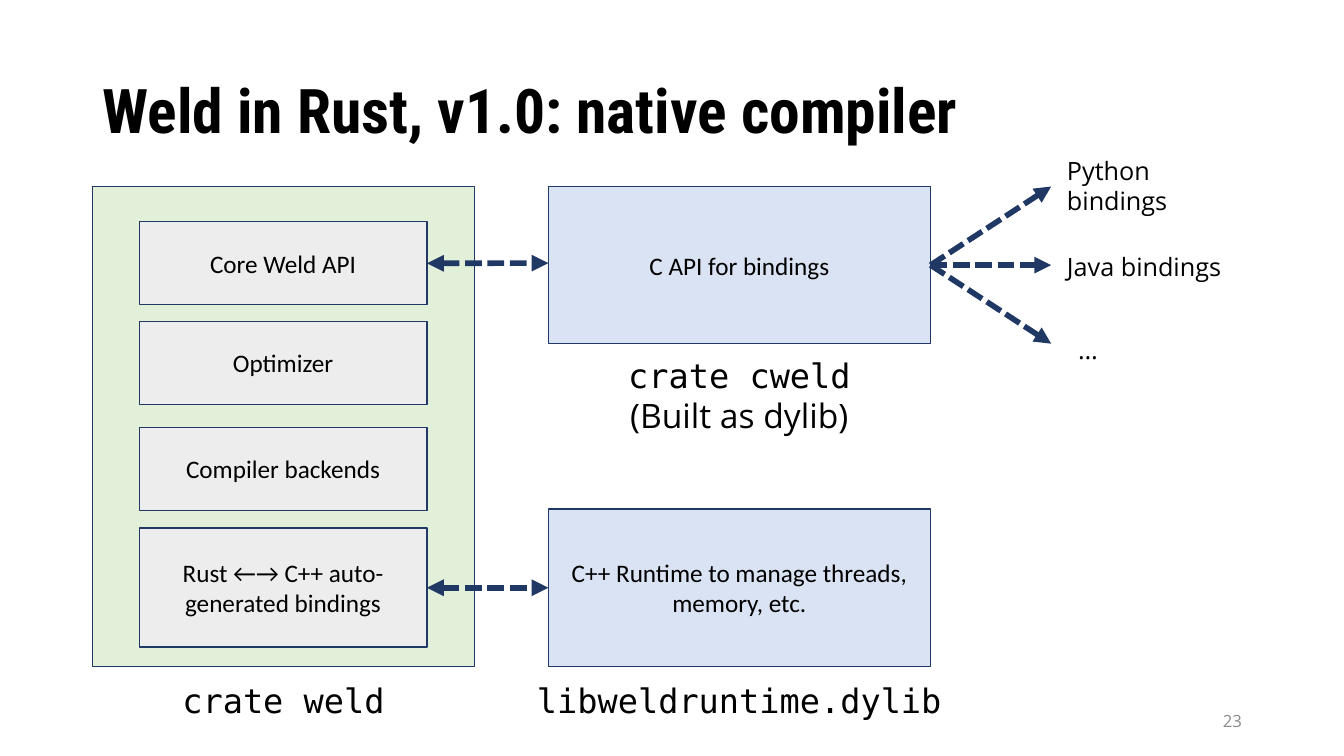
from lxml import etree
from pptx import Presentation
from pptx.dml.color import RGBColor
from pptx.enum import dml, shapes, text
from pptx.oxml import ns
from pptx.util import Cm, Pt

NAVY = RGBColor(0x20, 0x38, 0x64)
GREEN = RGBColor(0xE2, 0xF0, 0xD9)
BLUE = RGBColor(0xDA, 0xE3, 0xF3)
GREY = RGBColor(0xED, 0xED, 0xED)
BLACK = RGBColor(0, 0, 0)
NUMBER_GREY = RGBColor(0x8C, 0x8C, 0x8C)

BODY, MONO, HEADING, BOX = "Open Sans", "DejaVu Sans Mono", "Roboto Condensed", "Calibri"
LEFT, ALIGN_C, RIGHT = text.PP_ALIGN.LEFT, text.PP_ALIGN.CENTER, text.PP_ALIGN.RIGHT
TOP, MIDDLE = text.MSO_ANCHOR.TOP, text.MSO_ANCHOR.MIDDLE

CRATE_X, CRATE_W = 2.33, 9.63
PART_X, PART_W = 3.51, 7.25
LIB_X, LIB_H = 13.82, 3.96
TOP_Y = 4.7
RUNTIME_Y = 12.83


def style(p, size, font, color=BLACK, align=LEFT, bold=False):
    p.alignment = align
    p.font.size, p.font.name, p.font.bold = Pt(size), font, bold
    p.font.color.rgb = color


def add_box(s, x, y, w, h, fill, label=None):
    sp = s.shapes.add_shape(shapes.MSO_SHAPE.RECTANGLE, Cm(x), Cm(y), Cm(w), Cm(h))
    sp.shadow.inherit = False
    sp.fill.solid()
    sp.fill.fore_color.rgb = fill
    sp.line.color.rgb = NAVY
    sp.line.width = Pt(1)
    if label:
        tf = sp.text_frame
        tf.word_wrap, tf.vertical_anchor = True, MIDDLE
        tf.text = label
        style(tf.paragraphs[0], 18, BOX, align=ALIGN_C)
    return sp


def add_text(s, x, y, w, h, lines, size, color=BLACK, align=LEFT, bold=False, anchor=TOP):
    """Add a text box; lines is a list of (text, font), one per paragraph."""
    tf = s.shapes.add_textbox(Cm(x), Cm(y), Cm(w), Cm(h)).text_frame
    tf.word_wrap, tf.vertical_anchor = True, anchor
    for i, (line, font) in enumerate(lines):
        p = tf.add_paragraph() if i else tf.paragraphs[0]
        p.text = line
        style(p, size, font, color, align, bold)
    return tf


def add_arrow(s, x1, y1, x2, y2, begin, end=None, both=False):
    """Dashed arrow from the right of begin, optionally joined to the left of end."""
    c = s.shapes.add_connector(shapes.MSO_CONNECTOR.STRAIGHT, Cm(x1), Cm(y1), Cm(x2), Cm(y2))
    c.begin_connect(begin, 3)
    if end is not None:
        c.end_connect(end, 1)
    c.line.color.rgb = NAVY
    c.line.width = Pt(4)
    c.line.dash_style = dml.MSO_LINE.SQUARE_DOT
    ln = c.line._get_or_add_ln()
    for tag in ("a:headEnd", "a:tailEnd") if both else ("a:tailEnd",):
        etree.SubElement(ln, ns.qn(tag), type="triangle")
    etree.SubElement(c._element.spPr, ns.qn("a:effectLst"))


def main():
    prs = Presentation()
    prs.slide_width, prs.slide_height = Cm(33.87), Cm(19.05)
    s = prs.slides.add_slide(prs.slide_layouts[6])

    title = add_text(s, CRATE_X, 1.02, 29.21, 3.68,
                     [("Weld in Rust, v1.0: native compiler", HEADING)], 44,
                     bold=True, anchor=MIDDLE)
    title.paragraphs[0].line_spacing = 0.9
    add_text(s, 23.93, 17.65, 7.62, 1.02, [("23", BODY)], 12, NUMBER_GREY, RIGHT, anchor=MIDDLE)

    add_box(s, CRATE_X, TOP_Y, CRATE_W, 12.09, GREEN)
    core, _, _, bindings = [
        add_box(s, PART_X, y, PART_W, h, GREY, label)
        for y, h, label in (
            (5.59, 2.09, "Core Weld API"),
            (8.1, 2.09, "Optimizer"),
            (10.77, 2.09, "Compiler backends"),
            (13.31, 3, "Rust ←→ C++ auto-generated bindings"),
        )
    ]
    c_api = add_box(s, LIB_X, TOP_Y, CRATE_W, LIB_H, BLUE, "C API for bindings")
    runtime = add_box(s, LIB_X, RUNTIME_Y, CRATE_W, LIB_H, BLUE,
                      "C++ Runtime to manage threads, memory, etc.")

    part_right, lib_right = PART_X + PART_W, LIB_X + CRATE_W
    core_mid, runtime_mid = 6.63, RUNTIME_Y + LIB_H / 2
    add_arrow(s, part_right, core_mid, LIB_X, core_mid, core, both=True)
    add_arrow(s, part_right, runtime_mid, LIB_X, runtime_mid, bindings, runtime, both=True)
    for step in range(3):
        add_arrow(s, lib_right, TOP_Y + LIB_H / 2, 26.49, TOP_Y + step * LIB_H / 2, c_api)

    for x, y, w, h, lines in (
        (CRATE_X, 17.02, CRATE_W, 1.27, [("crate weld", MONO)]),
        (13.08, 17.02, 11.1, 1.27, [("libweldruntime.dylib", MONO)]),
        (LIB_X, 8.81, CRATE_W, 2.31, [("crate cweld", MONO), ("(Built as dylib)", BODY)]),
    ):
        add_text(s, x, y, w, h, lines, 24, align=ALIGN_C)

    for x, y, h, label in (
        (26.64, 3.78, 1.8, "Python bindings"),
        (26.64, 6.22, 1.02, "Java bindings"),
        (26.92, 8.31, 1.02, "…"),
    ):
        add_text(s, x, y, 4.6, h, [(label, BODY)], 18)

    prs.save("out.pptx")


if __name__ == "__main__":
    main()
